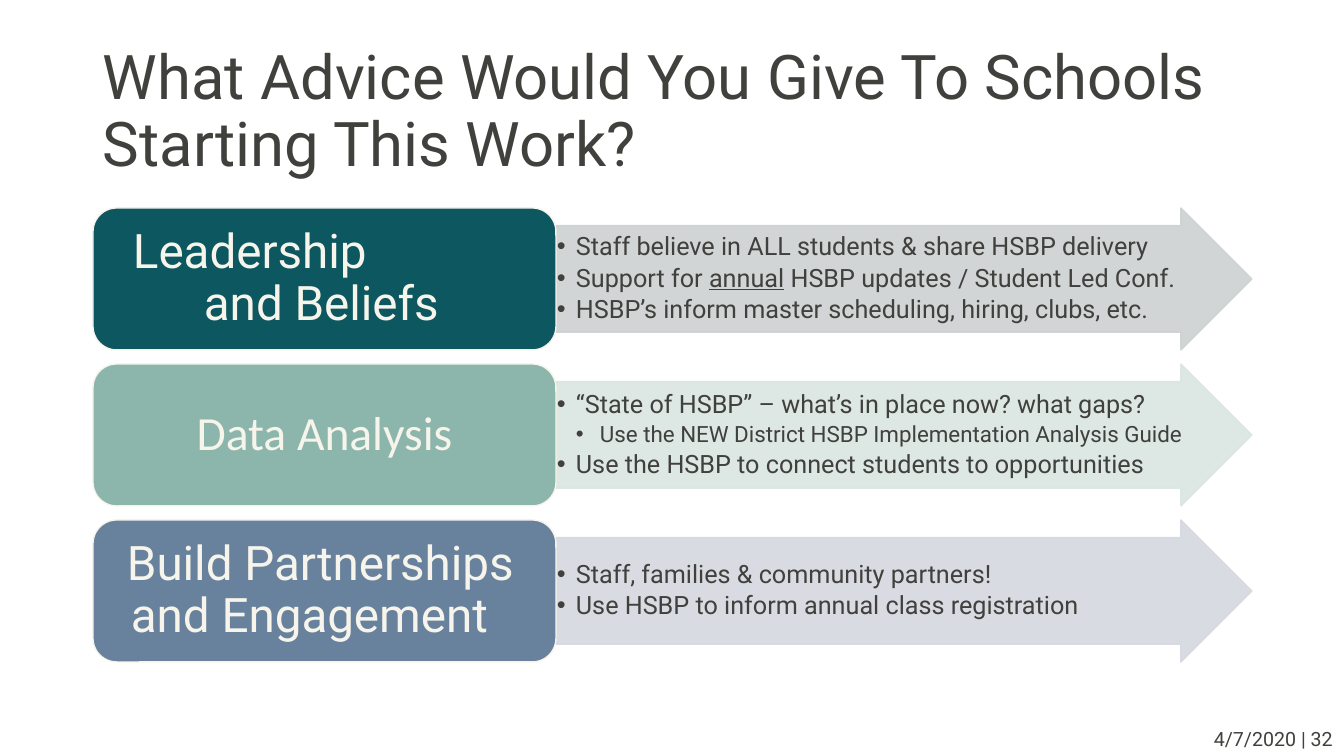
from lxml.etree import SubElement
from pptx import Presentation
from pptx.dml.color import RGBColor
from pptx.enum.shapes import MSO_SHAPE as Shape
from pptx.enum.text import MSO_ANCHOR as Anchor, PP_ALIGN as Align
from pptx.oxml.ns import qn
from pptx.util import Pt

INK = RGBColor(0x40, 0x40, 0x3D)
CREAM = RGBColor(0xF7, 0xF5, 0xEB)
TEAL = RGBColor(0x0D, 0x57, 0x61)
SAGE = RGBColor(0x8C, 0xB5, 0xAB)
SLATE = RGBColor(0x68, 0x82, 0x9E)
PALE_TEAL = RGBColor(0xCC, 0xD1, 0xD2)
PALE_SAGE = RGBColor(0xDA, 0xE5, 0xE2)
PALE_SLATE = RGBColor(0xD4, 0xD8, 0xDF)

TITLE = "What Advice Would You Give To Schools Starting This Work?"
FOOTER = "4/7/2020 | 32"
THEMES = [
    {
        "label": [("Leadership", 19), ("and Beliefs", 90)],
        "align": Align.LEFT, "font": "Roboto", "dark": TEAL, "pale": PALE_TEAL,
        "advice": [
            ("Staff believe in ALL students & share HSBP delivery", 1),
            ("Support for _annual_ HSBP updates / Student Led Conf.", 1),
            ("HSBP’s inform master scheduling, hiring, clubs, etc.", 1),
        ],
    },
    {
        "label": [("Data Analysis", 0)],
        "align": Align.CENTER, "font": "Calibri", "dark": SAGE, "pale": PALE_SAGE,
        "advice": [
            ("“State of HSBP” – what’s in place now? what gaps?", 1),
            ("Use the NEW District HSBP Implementation Analysis Guide", 2),
            ("Use the HSBP to connect students to opportunities", 1),
        ],
    },
    {
        "label": [("Build Partnerships", 13), ("and Engagement", 17)],
        "align": Align.LEFT, "font": "Roboto", "dark": SLATE, "pale": PALE_SLATE,
        "advice": [
            ("Staff, families & community partners!", 1),
            ("Use HSBP to inform annual class registration", 1),
        ],
    },
]
LEVELS = {1: (19, 19, 18), 2: (43, 24, 16)}

ROW_TOP, ROW_PITCH, ROW_HEIGHT = 208, 156, 142
LABEL_LEFT, LABEL_WIDTH, ARROW_WIDTH = 93, 463, 696


def px(length):
    return round(length * 914400 / 100.8)


def box(left, top, width, height):
    return [px(length) for length in (left, top, width, height)]


def write(frame, text, new=False, size=18, color=INK, font="Roboto", align=Align.LEFT,
          margin=0, hanging=0, bullet=None, spacing=0.9, after=0):
    paragraph = frame.add_paragraph() if new else frame.paragraphs[0]
    props = paragraph._p.get_or_add_pPr()
    props.set("marL", str(px(margin)))
    props.set("indent", str(-px(hanging)))
    if bullet:
        SubElement(props, qn("a:buFont"), typeface="Arial")
        SubElement(props, qn("a:buChar"), char=bullet)
    paragraph.alignment = align
    paragraph.line_spacing = spacing
    paragraph.space_before = Pt(0)
    paragraph.space_after = Pt(after)
    for position, piece in enumerate(text.split("_")):
        run = paragraph.add_run()
        run.text = piece
        run.font.size = Pt(size)
        run.font.name = font
        run.font.color.rgb = color
        if position % 2:
            run.font.underline = True


def set_frame(frame, side, end):
    frame.word_wrap = True
    frame.vertical_anchor = Anchor.MIDDLE
    frame.margin_left = frame.margin_right = px(side)
    frame.margin_top = frame.margin_bottom = px(end)


def add_block(kind, place, fill, line):
    block = slide.shapes.add_shape(kind, *box(*place))
    block.shadow.inherit = False
    block.fill.solid()
    block.fill.fore_color.rgb = fill
    block.line.color.rgb = line
    block.line.width = Pt(1)
    return block


prs = Presentation()
prs.slide_width, prs.slide_height = px(1344), px(756)
slide = prs.slides.add_slide(prs.slide_layouts[5])

title = slide.shapes.title
title.left, title.top, title.width, title.height = box(93, 40, 1159, 146)
set_frame(title.text_frame, 10, 5)
write(title.text_frame, TITLE, size=44)

for row, theme in enumerate(THEMES):
    top = ROW_TOP + row * ROW_PITCH
    arrow = add_block(Shape.RIGHT_ARROW, (LABEL_LEFT + LABEL_WIDTH, top, ARROW_WIDTH, ROW_HEIGHT),
                      theme["pale"], theme["pale"])
    arrow.adjustments[0] = 0.75
    arrow.adjustments[1] = 0.5
    for tint in arrow._element.spPr.iter(qn("a:srgbClr")):
        SubElement(tint, qn("a:alpha"), val="90000")
    set_frame(arrow.text_frame, 1, 1)
    for number, (text, level) in enumerate(theme["advice"]):
        margin, hanging, size = LEVELS[level]
        write(arrow.text_frame, text, new=number > 0, size=size, margin=margin,
              hanging=hanging, bullet="•", after=3)

    label = add_block(Shape.ROUNDED_RECTANGLE, (LABEL_LEFT, top, LABEL_WIDTH, ROW_HEIGHT),
                      theme["dark"], CREAM)
    set_frame(label.text_frame, 14, 7)
    for number, (text, margin) in enumerate(theme["label"]):
        write(label.text_frame, text, new=number > 0, size=34, color=CREAM,
              font=theme["font"], align=theme["align"], margin=margin)

footer = slide.shapes.add_textbox(*box(1171, 722, 172, 34))
set_frame(footer.text_frame, 10, 5)
write(footer.text_frame, FOOTER, size=14, align=Align.RIGHT, spacing=1.0)

prs.save("out.pptx")
